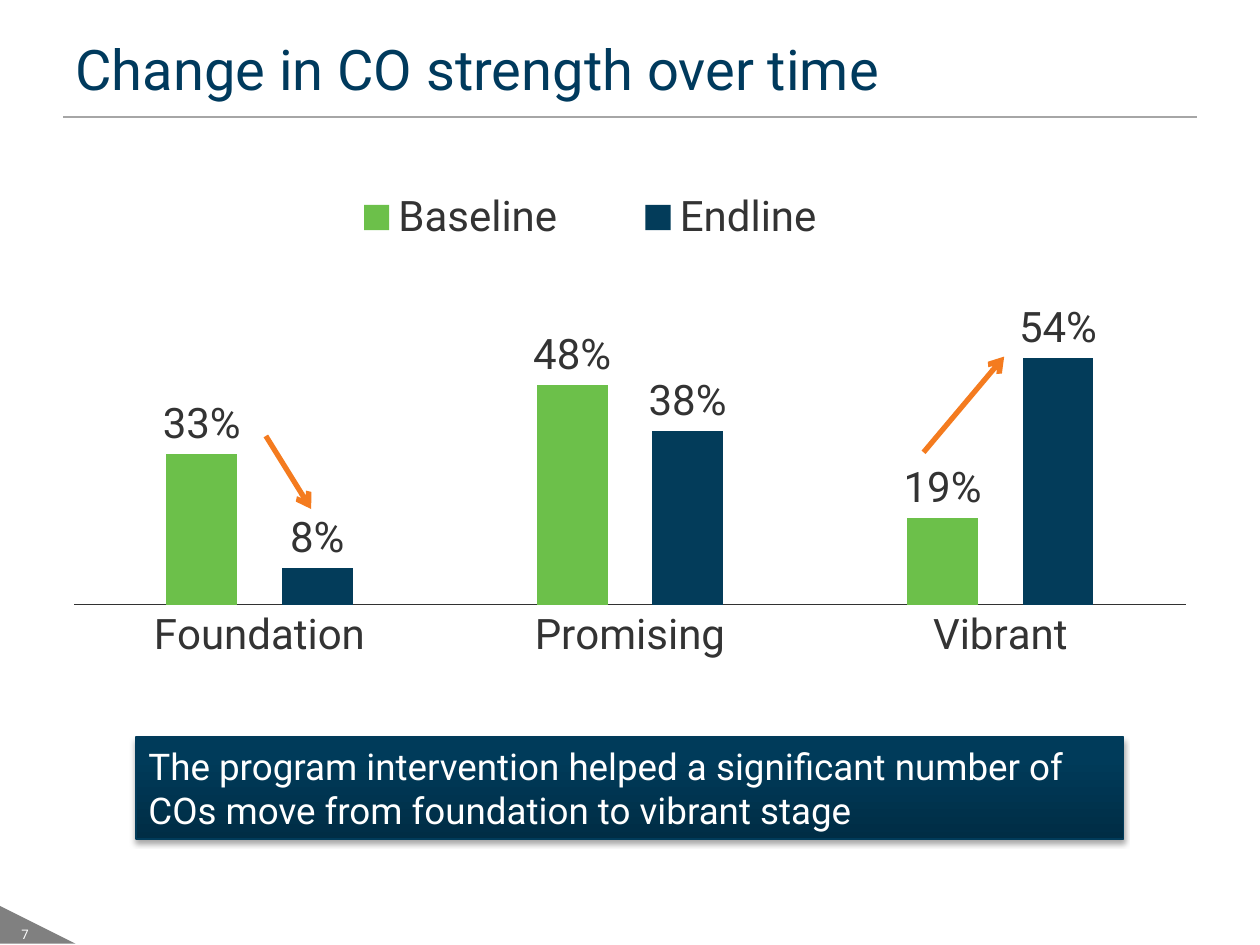
from copy import deepcopy

from lxml import etree
from pptx import Presentation
from pptx import util as u
from pptx.chart.data import CategoryChartData
from pptx.dml.color import RGBColor
from pptx.enum import chart as charts, shapes, text
from pptx.oxml import parse_xml
from pptx.oxml.ns import nsdecls, qn

FONT = "Roboto"
NAVY = RGBColor(0x00, 0x3A, 0x5D)
BAR_NAVY = RGBColor(0x03, 0x3C, 0x5A)
GREEN = RGBColor(0x6C, 0xC0, 0x4A)
ORANGE = RGBColor(0xF4, 0x7B, 0x1F)
INK = RGBColor(0x33, 0x33, 0x33)
AXIS = RGBColor(0x32, 0x32, 0x32)
RULE = RGBColor(0xA6, 0xA6, 0xA6)
GRAY = RGBColor(0x80, 0x80, 0x80)
WHITE = RGBColor(0xFF, 0xFF, 0xFF)
PANEL_EDGE = RGBColor(0x01, 0x3B, 0x5A)
PANEL_STOPS = [
    (0, RGBColor(0x00, 0x2D, 0x45)),
    (0.8, RGBColor(0x00, 0x3B, 0x5A)),
    (1, RGBColor(0x00, 0x3B, 0x5B)),
]


def inches(*lengths):
    return [u.Inches(length) for length in lengths]


def set_font(font, size, color):
    font.color.rgb = color
    for name, value in {"name": FONT, "size": u.Pt(size), "bold": False}.items():
        setattr(font, name, value)


def write_text(shape, words, size, color, **frame_format):
    frame = shape.text_frame
    for name, value in {"word_wrap": True, **frame_format}.items():
        setattr(frame, name, value)
    paragraph = frame.paragraphs[0]
    run = paragraph.add_run()
    run.text = words
    set_font(run.font, size, color)
    return paragraph


def add_line(slide, start, end, color, width, arrow=False):
    line = slide.shapes.add_connector(
        shapes.MSO_CONNECTOR.STRAIGHT, *inches(*start, *end))
    line.line.color.rgb = color
    line.line.width = u.Pt(width)
    if arrow:
        etree.SubElement(line.line._get_or_add_ln(), qn("a:tailEnd"), type="arrow")
    etree.SubElement(line._element.spPr, qn("a:effectLst"))


def add_title(slide, box, words):
    add_line(slide, (0.5, 0.93), (9.5, 0.93), RULE, 1)
    title = slide.shapes.add_textbox(*inches(*box))
    write_text(title, words, 32, NAVY, vertical_anchor=text.MSO_ANCHOR.MIDDLE)


def set_layout(element, x, y, w, h, inner=False):
    target = '<c:layoutTarget val="inner"/>' if inner else ""
    modes = '<c:xMode val="edge"/><c:yMode val="edge"/>'
    sizes = "".join(f'<c:{name} val="{value}"/>'
                    for name, value in zip("xywh", (x, y, w, h)))
    for layout in element.findall(qn("c:layout")):
        element.remove(layout)
    layout = parse_xml(f'<c:layout {nsdecls("c")}><c:manualLayout>{target}{modes}'
                       f"{sizes}</c:manualLayout></c:layout>")
    position = element.find(qn("c:legendPos"))
    element.insert(0 if position is None else 1, layout)


def add_strength_chart(slide, box):
    data = CategoryChartData(number_format="0")
    data.categories = ["Foundation", "Promising", "Vibrant"]
    data.add_series("Baseline", (33, 48, 19))
    data.add_series("Endline", (8, 38, 54))
    chart = slide.shapes.add_chart(
        charts.XL_CHART_TYPE.COLUMN_CLUSTERED, *inches(*box), data).chart
    chart.has_title = False
    set_font(chart.font, 24, INK)

    chart.has_legend = True
    chart.legend.position = charts.XL_LEGEND_POSITION.BOTTOM
    chart.legend.include_in_layout = False
    set_font(chart.legend.font, 24, INK)
    set_layout(chart.legend._element, 0.2, 0.08, 0.53, 0.12)

    values = chart.value_axis
    for name, value in {"minimum_scale": 0, "maximum_scale": 100,
                        "has_major_gridlines": False, "visible": False}.items():
        setattr(values, name, value)
    categories = chart.category_axis
    categories.major_tick_mark = charts.XL_TICK_MARK.NONE
    categories.format.line.color.rgb = AXIS
    categories.format.line.width = u.Pt(0.75)
    set_font(categories.tick_labels.font, 24, INK)

    plot = chart.plots[0]
    for name, value in {"gap_width": 260, "overlap": -63,
                        "vary_by_categories": False}.items():
        setattr(plot, name, value)
    for series, color in zip(plot.series, (GREEN, BAR_NAVY)):
        series.format.fill.solid()
        series.format.fill.fore_color.rgb = color
        labels = series.data_labels
        for name, value in {"show_value": True, "number_format": '0"%"',
                            "number_format_is_linked": False,
                            "position": charts.XL_LABEL_POSITION.OUTSIDE_END}.items():
            setattr(labels, name, value)
        set_font(labels.font, 24, INK)
    set_layout(chart._chartSpace.chart.plotArea, 0.01, 0.03, 0.98, 0.72, inner=True)


def add_page_corner(slide, box, number):
    corner = slide.shapes.add_shape(
        shapes.MSO_SHAPE.RIGHT_TRIANGLE, *inches(*box))
    corner.shadow.inherit = False
    corner.fill.solid()
    corner.fill.fore_color.rgb = GRAY
    corner.line.fill.background()
    margins = dict.fromkeys(
        ("margin_left", "margin_right", "margin_top", "margin_bottom"), 0)
    paragraph = write_text(corner, number, 7.5, WHITE,
                           vertical_anchor=text.MSO_ANCHOR.MIDDLE, **margins)
    paragraph.alignment = text.PP_ALIGN.CENTER


def add_takeaway(slide, box, words):
    panel = slide.shapes.add_shape(shapes.MSO_SHAPE.RECTANGLE, *inches(*box))
    panel.fill.gradient()
    panel.fill.gradient_angle = 90
    properties = panel._element.spPr
    stops = properties.find(qn("a:gradFill")).find(qn("a:gsLst"))
    stops.insert(1, deepcopy(stops[0]))
    for stop, (position, color) in zip(panel.fill.gradient_stops, PANEL_STOPS):
        stop.position = position
        stop.color.rgb = color
    panel.line.color.rgb = PANEL_EDGE
    panel.line.width = u.Pt(0.75)
    panel.shadow.inherit = False
    shadow = etree.SubElement(
        properties.find(qn("a:effectLst")), qn("a:outerShdw"),
        blurRad=str(u.Pt(3.1)), dist=str(u.Pt(1.8)), dir="5400000", rotWithShape="0")
    color = etree.SubElement(shadow, qn("a:srgbClr"), val="000000")
    etree.SubElement(color, qn("a:alpha"), val="35000")
    paragraph = write_text(panel, words, 21, WHITE,
                           vertical_anchor=text.MSO_ANCHOR.TOP,
                           auto_size=text.MSO_AUTO_SIZE.SHAPE_TO_FIT_TEXT)
    paragraph.alignment = text.PP_ALIGN.LEFT


def main():
    presentation = Presentation()
    presentation.slide_width, presentation.slide_height = inches(10, 7.5)
    slide = presentation.slides.add_slide(presentation.slide_layouts[6])
    add_title(slide, (0.5, 0.2, 9.21, 0.68), "Change in CO strength over time")
    add_strength_chart(slide, (0.5, 1.02, 9, 5.04))
    add_page_corner(slide, (0, 7.19, 0.6, 0.3), "7")
    add_line(slide, (7.33, 3.59), (7.97, 2.83), ORANGE, 3, arrow=True)
    add_line(slide, (2.11, 3.46), (2.47, 4.04), ORANGE, 3, arrow=True)
    add_takeaway(slide, (1.08, 5.85, 7.84, 0.81),
                 "The program intervention helped a significant number of "
                 "COs move from foundation to vibrant stage")
    presentation.save("out.pptx")


if __name__ == "__main__":
    main()
